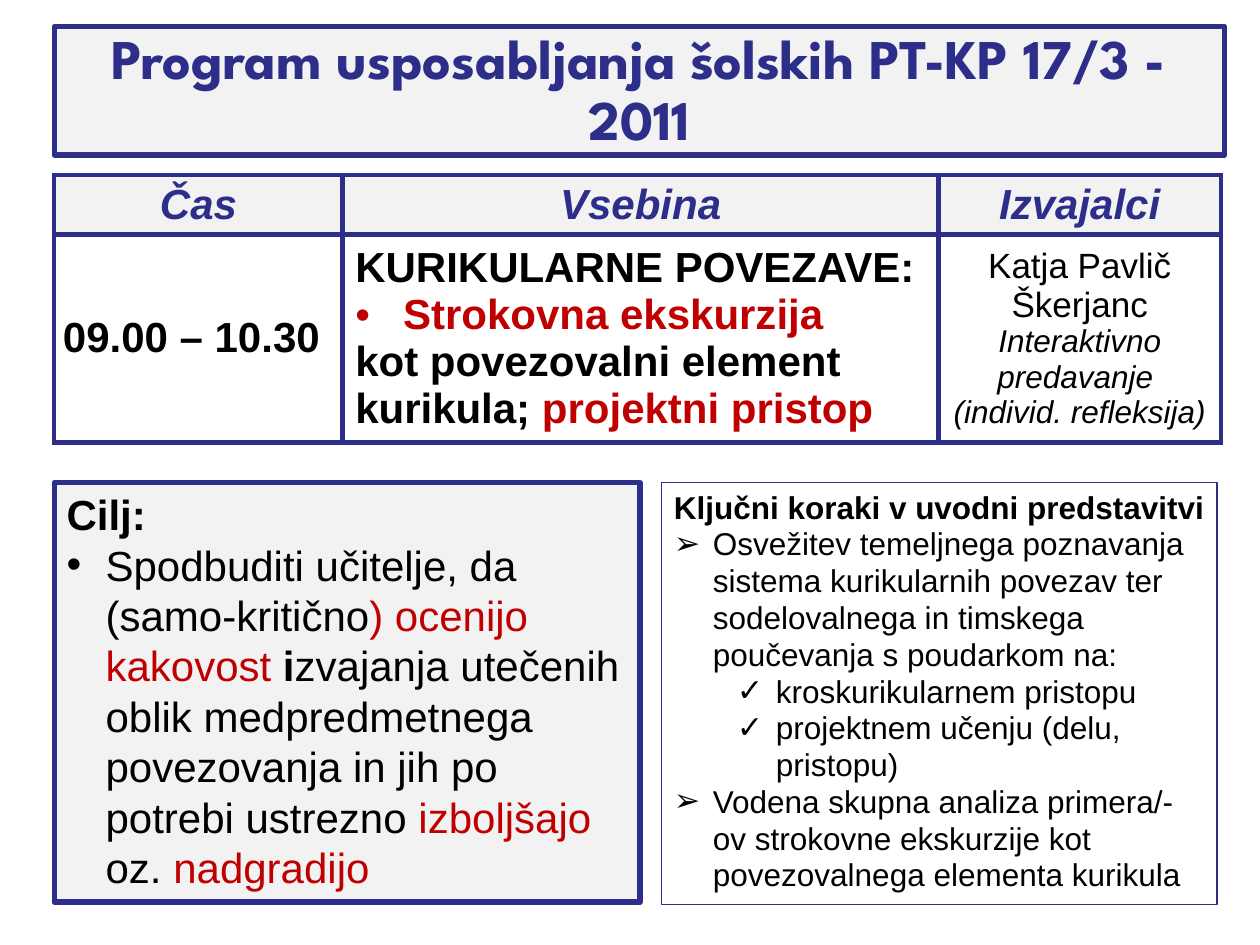
from dataclasses import dataclass
from typing import Optional

from lxml import etree
from pptx import Presentation
from pptx import util as u
from pptx.dml.color import RGBColor
from pptx.enum import shapes, text
from pptx.oxml import ns

NAVY = RGBColor(0x2D, 0x2D, 0x8A)
RED = RGBColor(0xC0, 0x00, 0x00)
BLACK = RGBColor(0x00, 0x00, 0x00)
GREY = RGBColor(0xF2, 0xF2, 0xF2)
WHITE = RGBColor(0xFF, 0xFF, 0xFF)
LEFT, CENTER = text.PP_ALIGN.LEFT, text.PP_ALIGN.CENTER
MIDDLE, TOP = text.MSO_ANCHOR.MIDDLE, text.MSO_ANCHOR.TOP


@dataclass(frozen=True)
class Span:
    words: str
    color: RGBColor = BLACK
    bold: bool = False
    italic: bool = False


@dataclass(frozen=True)
class Para:
    spans: tuple[Span, ...]
    size: float
    align: text.PP_ALIGN = LEFT
    bullet: str = ""
    margin: float = 0
    hanging: float = 0.31
    level: int = 0
    spacing: Optional[float] = None
    font: str = "Arial"


@dataclass(frozen=True)
class Panel:
    left: float
    top: float
    width: float
    height: float
    fill: Optional[RGBColor]
    border: float
    anchor: text.MSO_ANCHOR
    paras: tuple[Para, ...]


@dataclass(frozen=True)
class Cell:
    paras: tuple[Para, ...]
    fill: RGBColor = WHITE
    inset: float = 0.07


def heading(words: str) -> Cell:
    return Cell((Para((Span(words, NAVY, True, True),), 24, CENTER),), GREY)


def step(words: str, level: int = 0) -> Para:
    return Para((Span(words),), 18, bullet="➢✓"[level], margin=0.31 + level / 2,
                level=level, spacing=21)


TITLE = Panel(0.43, 0.21, 9.29, 1.02, GREY, 3, MIDDLE, (
    Para((Span("Program usposabljanja šolskih PT-KP 17/3 - 2011", NAVY, True),),
         32, CENTER, spacing=35, font="League Spartan"),
))
GOAL = Panel(0.43, 3.83, 4.65, 3.33, GREY, 3, TOP, (
    Para((Span("Cilj:", bold=True),), 24, spacing=28.8),
    Para((
        Span("Spodbuditi učitelje, da (samo-kritično"),
        Span(") ocenijo kakovost", RED),
        Span(" i", bold=True),
        Span("zvajanja utečenih oblik medpredmetnega povezovanja in jih po potrebi ustrezno "),
        Span("izboljšajo", RED),
        Span(" oz. "),
        Span("nadgradijo", RED),
    ), 24, bullet="•", margin=0.31, spacing=28.8),
))
STEPS = Panel(5.25, 3.83, 4.41, 3.35, None, 0.75, TOP, (
    Para((Span("Ključni koraki v uvodni predstavitvi", bold=True),), 18, spacing=21),
    step("Osvežitev temeljnega poznavanja sistema kurikularnih povezav ter "
         "sodelovalnega in timskega poučevanja s poudarkom na:"),
    step("kroskurikularnem pristopu", 1),
    step("projektnem učenju (delu, pristopu)", 1),
    step("Vodena skupna analiza primera/-ov strokovne ekskurzije kot "
         "povezovalnega elementa kurikula"),
))
COLUMNS = (2.29, 4.73, 2.24)
ROWS = (0.47, 1.65)
SCHEDULE = (
    (heading("Čas"), heading("Vsebina"), heading("Izvajalci")),
    (
        Cell((Para((Span("09.00 – 10.30", bold=True),), 24),)),
        Cell((
            Para((Span("KURIKULARNE POVEZAVE:", bold=True),), 24),
            Para((Span("Strokovna ekskurzija", RED, True),), 24,
                 bullet="•", margin=0.38, hanging=0.38),
            Para((Span("kot povezovalni element kurikula; ", bold=True),
                  Span("projektni pristop", RED, True)), 24),
        ), inset=0.1),
        Cell((
            Para((Span("Katja Pavlič Škerjanc"),), 20, CENTER),
            Para((Span("Interaktivno predavanje ", italic=True),), 18, CENTER),
            Para((Span("(individ. refleksija)", italic=True),), 18, CENTER),
        )),
    ),
)


def write(frame, paras: tuple[Para, ...]) -> None:
    for index, item in enumerate(paras):
        para = frame.add_paragraph() if index else frame.paragraphs[0]
        para.alignment, para.level = item.align, item.level
        para.space_before = para.space_after = u.Pt(0)
        if item.spacing:
            para.line_spacing = u.Pt(item.spacing)
        if item.bullet:
            props = para._p.get_or_add_pPr()
            props.set("marL", str(u.Inches(item.margin)))
            props.set("indent", str(-u.Inches(item.hanging)))
            etree.SubElement(props, ns.qn("a:buFont"), typeface="Arial")
            etree.SubElement(props, ns.qn("a:buChar"), char=item.bullet)
        for part in item.spans:
            span = para.add_run()
            span.text = part.words
            span.font.name, span.font.size = item.font, u.Pt(item.size)
            span.font.bold, span.font.italic = part.bold, part.italic
            span.font.color.rgb = part.color


def add_panel(page, panel: Panel) -> None:
    box = page.shapes.add_shape(
        shapes.MSO_SHAPE.RECTANGLE, u.Inches(panel.left), u.Inches(panel.top),
        u.Inches(panel.width), u.Inches(panel.height))
    box.shadow.inherit = False
    if panel.fill is None:
        box.fill.background()
    else:
        box.fill.solid()
        box.fill.fore_color.rgb = panel.fill
    box.line.color.rgb, box.line.width = NAVY, u.Pt(panel.border)
    box.text_frame.word_wrap = True
    box.text_frame.vertical_anchor = panel.anchor
    write(box.text_frame, panel.paras)


def add_borders(cell) -> None:
    props = cell._tc.get_or_add_tcPr()
    for index, side in enumerate(("lnL", "lnR", "lnT", "lnB")):
        line = etree.Element(ns.qn(f"a:{side}"), w=str(u.Pt(3)))
        fill = etree.SubElement(line, ns.qn("a:solidFill"))
        etree.SubElement(fill, ns.qn("a:srgbClr"), val=str(NAVY))
        props.insert(index, line)


def add_schedule(page) -> None:
    table = page.shapes.add_table(
        len(ROWS), len(COLUMNS), u.Inches(0.43), u.Inches(1.39),
        u.Inches(sum(COLUMNS)), u.Inches(sum(ROWS))).table
    for column, width in zip(table.columns, COLUMNS):
        column.width = u.Inches(width)
    for row, height, items in zip(table.rows, ROWS, SCHEDULE):
        row.height = u.Inches(height)
        for cell, item in zip(row.cells, items):
            cell.fill.solid()
            cell.fill.fore_color.rgb = item.fill
            cell.margin_left = cell.margin_right = u.Inches(item.inset)
            cell.margin_top = cell.margin_bottom = u.Inches(0)
            cell.vertical_anchor = MIDDLE
            add_borders(cell)
            write(cell.text_frame, item.paras)


def main() -> None:
    """Build the training programme slide."""
    deck = Presentation()
    deck.slide_width, deck.slide_height = u.Inches(10), u.Inches(7.5)
    page = deck.slides.add_slide(deck.slide_layouts[6])
    add_panel(page, TITLE)
    add_schedule(page)
    add_panel(page, GOAL)
    add_panel(page, STEPS)
    deck.save("out.pptx")


if __name__ == "__main__":
    main()
